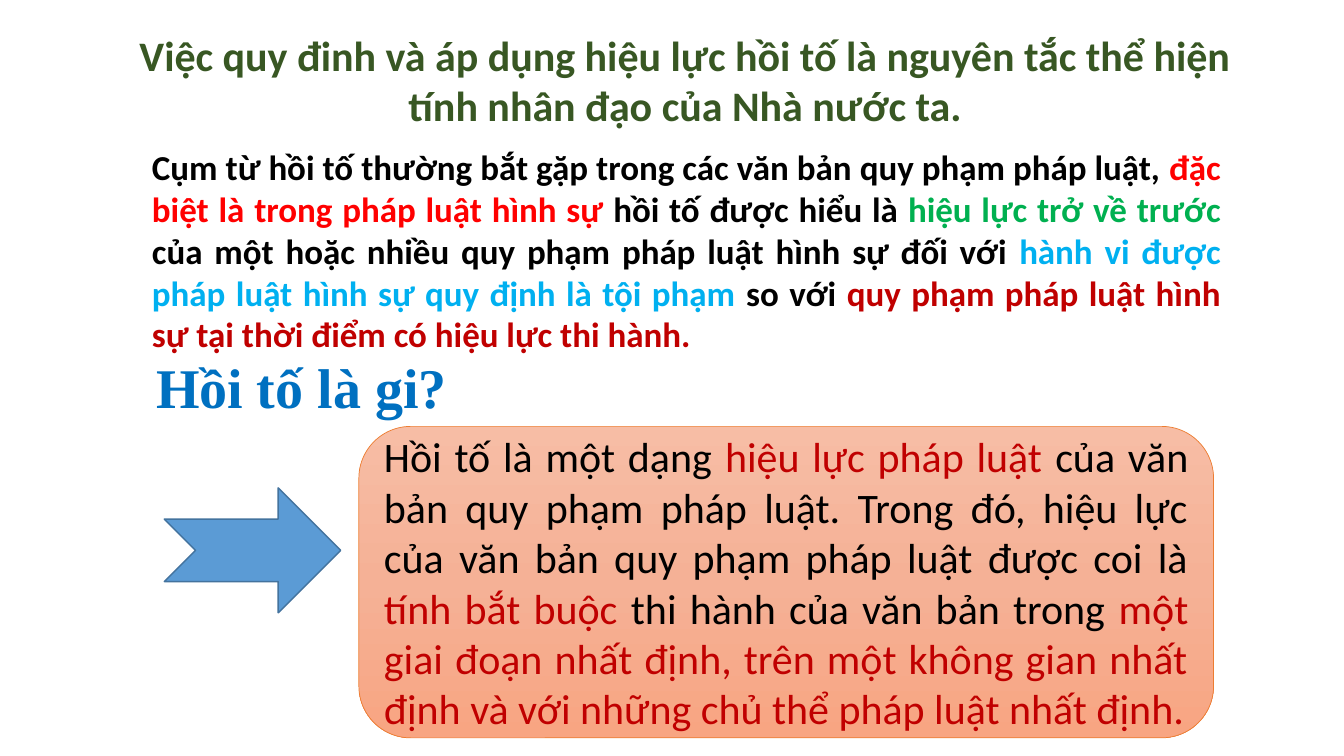
from copy import deepcopy
from typing import NamedTuple

from pptx import Presentation
from pptx.dml.color import RGBColor
from pptx.enum.shapes import MSO_SHAPE
from pptx.enum.text import MSO_ANCHOR, MSO_AUTO_SIZE, PP_ALIGN
from pptx.oxml.ns import qn
from pptx.shapes.autoshape import Shape
from pptx.util import Pt

BLACK = RGBColor(0x00, 0x00, 0x00)
RED = RGBColor(0xFF, 0x00, 0x00)
DARK_RED = RGBColor(0xC0, 0x00, 0x00)
GREEN = RGBColor(0x00, 0xB0, 0x50)
DARK_GREEN = RGBColor(0x38, 0x57, 0x23)
SKY = RGBColor(0x00, 0xB0, 0xF0)
BLUE = RGBColor(0x00, 0x70, 0xC0)
ARROW_FILL = RGBColor(0x5B, 0x9B, 0xD5)
ARROW_LINE = RGBColor(0x43, 0x73, 0x9E)
ORANGE = RGBColor(0xED, 0x7D, 0x31)
PEACH = [RGBColor(0xF7, 0xBD, 0xA5), RGBColor(0xF5, 0xB1, 0x96), RGBColor(0xF8, 0xA5, 0x82)]


class Box(NamedTuple):
    left: float
    top: float
    width: float
    height: float

    def lengths(self) -> list[Pt]:
        return [Pt(v) for v in self]


class Span(NamedTuple):
    text: str
    color: RGBColor


class Style(NamedTuple):
    size: float
    bold: bool = True
    align: PP_ALIGN = PP_ALIGN.JUSTIFY
    anchor: MSO_ANCHOR = MSO_ANCHOR.TOP
    font: str = "Calibri"
    fit: MSO_AUTO_SIZE = MSO_AUTO_SIZE.SHAPE_TO_FIT_TEXT


TITLE = [Span("Việc quy đinh và áp dụng hiệu lực hồi tố là nguyên tắc thể hiện "
              "tính nhân đạo của Nhà nước ta.", DARK_GREEN)]
QUESTION = [Span("Hồi tố là gi?", BLUE)]
USAGE = [
    Span("Cụm từ hồi tố thường bắt gặp trong các văn bản quy phạm pháp luật, ", BLACK),
    Span("đặc biệt là trong pháp luật hình sự ", RED),
    Span("hồi tố được hiểu là ", BLACK),
    Span("hiệu lực trở về trước ", GREEN),
    Span("của một hoặc nhiều quy phạm pháp luật hình sự đối với ", BLACK),
    Span("hành vi được pháp luật hình sự quy định là tội phạm ", SKY),
    Span("so với ", BLACK),
    Span("quy phạm pháp luật hình sự tại thời điểm có hiệu lực thi hành.", DARK_RED),
]
DEFINITION = [
    Span("Hồi tố là một dạng ", BLACK),
    Span("hiệu lực pháp luật ", DARK_RED),
    Span("của văn bản quy phạm pháp luật. Trong đó, hiệu lực của văn bản "
         "quy phạm pháp luật được coi là ", BLACK),
    Span("tính bắt buộc ", DARK_RED),
    Span("thi hành của văn bản trong ", BLACK),
    Span("một giai đoạn nhất định, trên một không gian nhất định "
         "và với những chủ thể pháp luật nhất định.", DARK_RED),
]


def write(s: Shape, spans: list[Span], style: Style) -> None:
    tf = s.text_frame
    tf.word_wrap = True
    tf.auto_size = style.fit
    tf.vertical_anchor = style.anchor
    p = tf.paragraphs[0]
    p.alignment = style.align
    p.line_spacing = 1.0
    p.font.size = Pt(style.size)
    p.font.bold = style.bold
    p.font.name = style.font
    for span in spans:
        r = p.add_run()
        r.text = span.text
        r.font.color.rgb = span.color


def add_outlined(slide, kind: MSO_SHAPE, box: Box, line: RGBColor, weight: float) -> Shape:
    s = slide.shapes.add_shape(kind, *box.lengths())
    s.shadow.inherit = False
    s.line.color.rgb = line
    s.line.width = Pt(weight)
    return s


def fill_gradient(s: Shape, colors: list[RGBColor]) -> None:
    s.fill.gradient()
    s.fill.gradient_angle = 270
    stops = s._element.spPr.find(qn("a:gradFill")).find(qn("a:gsLst"))
    for _ in range(len(colors) - len(stops)):
        stops.append(deepcopy(stops[0]))
    for i, (stop, color) in enumerate(zip(s.fill.gradient_stops, colors)):
        stop.position = i / (len(colors) - 1)
        stop.color.rgb = color


def main() -> None:
    prs = Presentation()
    prs.slide_width, prs.slide_height = Pt(960), Pt(540)
    slide = prs.slides.add_slide(prs.slide_layouts[5])

    title = slide.shapes.title
    title.left, title.top, title.width, title.height = Box(87.84, 17.28, 803.52, 79.92).lengths()
    write(title, TITLE, Style(30, align=PP_ALIGN.CENTER))

    question = slide.shapes.add_textbox(*Box(104.4, 248.4, 921.6, 55.44).lengths())
    write(question, QUESTION, Style(40, align=PP_ALIGN.LEFT, font="Times New Roman"))

    usage = slide.shapes.add_textbox(*Box(101.52, 100.08, 777.6, 158.4).lengths())
    write(usage, USAGE, Style(25))

    arrow = add_outlined(slide, MSO_SHAPE.NOTCHED_RIGHT_ARROW,
                         Box(117.36, 348.48, 126, 89.28), ARROW_LINE, 1)
    arrow.fill.solid()
    arrow.fill.fore_color.rgb = ARROW_FILL

    panel = add_outlined(slide, MSO_SHAPE.ROUNDED_RECTANGLE,
                         Box(256.32, 304.56, 610.56, 222.48), ORANGE, 0.5)
    fill_gradient(panel, PEACH)
    write(panel, DEFINITION,
          Style(30, bold=False, anchor=MSO_ANCHOR.MIDDLE, fit=MSO_AUTO_SIZE.NONE))

    prs.save("out.pptx")


if __name__ == "__main__":
    main()
